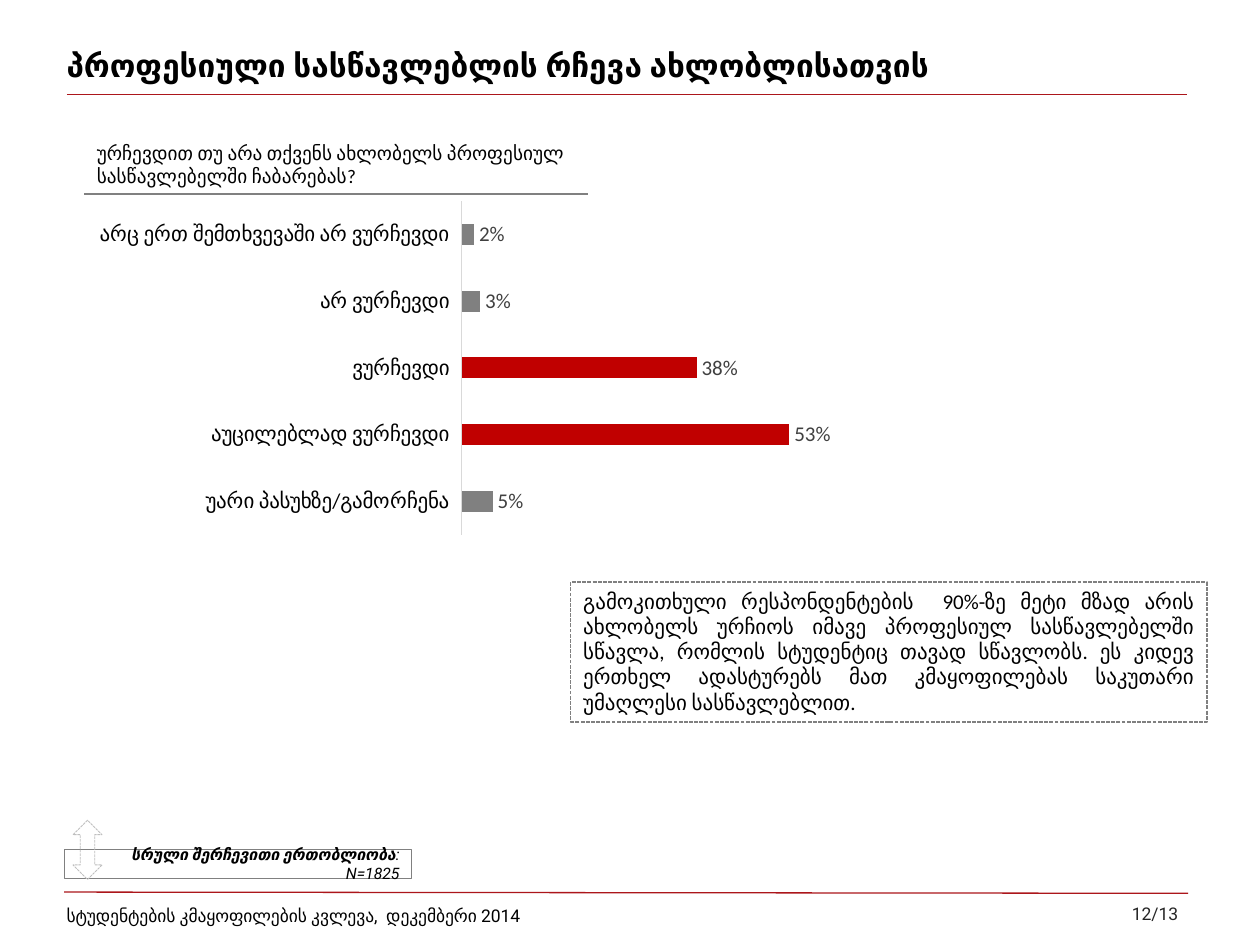
from dataclasses import dataclass
from typing import Optional

from lxml import etree
from pptx import Presentation
from pptx.chart.data import CategoryChartData
from pptx.dml.color import RGBColor
from pptx.enum.chart import XL_CHART_TYPE as Chart, XL_LABEL_POSITION as LabelPos
from pptx.enum.chart import XL_TICK_LABEL_POSITION as TickPos, XL_TICK_MARK as Tick
from pptx.enum.dml import MSO_LINE as Dash
from pptx.enum.shapes import MSO_CONNECTOR as Conn, MSO_SHAPE as Shape
from pptx.enum.text import MSO_ANCHOR as Anchor, MSO_AUTO_SIZE as Auto, PP_ALIGN as Align
from pptx.oxml.ns import qn
from pptx.util import Inches, Pt

BLACK, GREY, RED, RULE = "000000", "808080", "C00000", "AC161B"


@dataclass
class Rule:
    start: tuple
    end: tuple
    color: str


@dataclass
class Box:
    at: tuple
    runs: list  # (text, format values) pairs
    size: float
    font: str = "Roboto"
    color: str = BLACK
    align: Align = Align.LEFT
    anchor: Anchor = Anchor.MIDDLE
    auto: Auto = Auto.NONE
    outline: Optional[float] = None
    dash: Optional[Dash] = None


def rgb(value: str) -> RGBColor:
    return RGBColor.from_string(value)


def set_font(font, **values) -> None:
    font.color.rgb = rgb(values.pop("color"))
    for name, value in values.items():
        setattr(font, name, value)


def set_line(line, color: str, width: float, dash: Optional[Dash] = None) -> None:
    line.color.rgb = rgb(color)
    line.width = Pt(width)
    if dash:
        line.dash_style = dash


def add_rule(s, rule: Rule) -> None:
    points = [Inches(v) for v in rule.start + rule.end]
    line = s.shapes.add_connector(Conn.STRAIGHT, *points)
    set_line(line.line, rule.color, 0.75)
    etree.SubElement(line._element.spPr, qn("a:effectLst"))


def add_outline(s, kind: Shape, at: tuple, color: str, width: float, dash=None):
    sp = s.shapes.add_shape(kind, *map(Inches, at))
    sp.shadow.inherit = False
    sp.fill.background()
    set_line(sp.line, color, width, dash)
    return sp


def add_box(s, box: Box) -> None:
    if box.outline:
        sp = add_outline(s, Shape.RECTANGLE, box.at, GREY, box.outline, box.dash)
    else:
        sp = s.shapes.add_textbox(*map(Inches, box.at))
    tf = sp.text_frame
    layout = {"word_wrap": True, "auto_size": box.auto, "vertical_anchor": box.anchor}
    for name, value in layout.items():
        setattr(tf, name, value)
    p = tf.paragraphs[0]
    p.alignment = box.align
    for text, style in box.runs:
        r = p.add_run()
        r.text = text
        set_font(r.font, name=box.font, size=Pt(box.size), color=box.color, **style)


def add_answers(s, at: tuple, answers: dict, highlighted: set) -> None:
    data = CategoryChartData(number_format="0%")
    data.categories = list(answers)
    data.add_series("Series 1", list(answers.values()))
    chart = s.shapes.add_chart(Chart.BAR_CLUSTERED, *map(Inches, at), data).chart
    chart.has_legend = chart.has_title = False
    set_font(chart.font, name="Calibri", size=Pt(10), color=BLACK)

    # Axes
    cat, val = chart.category_axis, chart.value_axis
    cat.reverse_order = True
    cat.major_tick_mark = cat.minor_tick_mark = Tick.NONE
    cat.tick_label_position = TickPos.LOW
    set_font(cat.tick_labels.font, name="Calibri", size=Pt(12), color=BLACK)
    set_line(cat.format.line, "D9D9D9", 0.75)
    val.minimum_scale, val.maximum_scale = 0, 0.6
    val.has_major_gridlines = val.visible = False

    # Bars and their labels
    plot = chart.plots[0]
    plot.gap_width, plot.vary_by_categories = 219, False
    series = plot.series[0]
    series.invert_if_negative = False
    series.format.fill.solid()
    series.format.fill.fore_color.rgb = rgb(GREY)
    for i, answer in enumerate(answers):
        if answer in highlighted:
            fill = series.points[i].format.fill
            fill.solid()
            fill.fore_color.rgb = rgb(RED)
    labels = series.data_labels
    values = {"show_value": True, "number_format": "0%",
              "number_format_is_linked": False, "position": LabelPos.OUTSIDE_END}
    for name, value in values.items():
        setattr(labels, name, value)
    set_font(labels.font, name="Calibri", size=Pt(12), color="404040")


RULES = [
    Rule((0.51, 7.08), (9.43, 7.09), RULE),
    Rule((0.53, 0.75), (9.42, 0.75), RULE),
    Rule((0.67, 1.54), (4.67, 1.54), GREY),
]

BOXES = [
    # Page number and footer
    Box((7.92, 7.04, 1.53, 0.42), [("12/13", {})], 10, color="262626", align=Align.RIGHT),
    Box((0.43, 7.07, 5.85, 0.4),
        [("სტუდენტების კმაყოფილების კვლევა,  დეკემბერი 2014", {})], 10),
    # Title
    Box((0.43, 0.29, 7.8, 0.45),
        [("პროფესიული სასწავლებლის რჩევა ახლობლისათვის", {"bold": True})], 18),
    # Sample size
    Box((0.51, 6.74, 2.76, 0.23),
        [("სრული შერჩევითი ერთობლიობა", {"bold": True, "italic": True}),
         (": N=1825", {"italic": True})], 9, align=Align.RIGHT, outline=0.5),
    # Question
    Box((0.67, 1.07, 4.17, 0.47),
        [("ურჩევდით თუ არა თქვენს ახლობელს პროფესიულ სასწავლებელში ჩაბარებას?", {})],
        11, "Calibri", anchor=Anchor.TOP, auto=Auto.SHAPE_TO_FIT_TEXT),
    # Finding
    Box((4.53, 4.62, 5.05, 1.11),
        [("გამოკითხული რესპონდენტების  90%-ზე მეტი მზად არის ახლობელს ურჩიოს იმავე "
          "პროფესიულ სასწავლებელში სწავლა, რომლის სტუდენტიც თავად სწავლობს. ეს კიდევ "
          "ერთხელ ადასტურებს მათ კმაყოფილებას საკუთარი უმაღლესი სასწავლებლით.", {})],
        12, "Calibri", align=Align.JUSTIFY, anchor=Anchor.TOP,
        auto=Auto.SHAPE_TO_FIT_TEXT, outline=0.75, dash=Dash.SQUARE_DOT),
]

ANSWERS = {
    "არც ერთ შემთხვევაში არ ვურჩევდი": 0.02,
    "არ ვურჩევდი": 0.03,
    "ვურჩევდი": 0.38,
    "აუცილებლად ვურჩევდი": 0.53,
    "უარი პასუხზე/გამორჩენა": 0.05,
}


def main() -> None:
    prs = Presentation()
    prs.slide_width, prs.slide_height = Inches(10), Inches(7.5)
    s = prs.slides.add_slide(prs.slide_layouts[6])
    for rule in RULES:
        add_rule(s, rule)
    for box in BOXES:
        add_box(s, box)
    add_outline(s, Shape.UP_DOWN_ARROW, (0.58, 6.51, 0.23, 0.47), "BFBFBF", 0.5,
                Dash.SQUARE_DOT)
    add_answers(s, (0.67, 1.54, 6.06, 2.76), ANSWERS, {"ვურჩევდი", "აუცილებლად ვურჩევდი"})
    prs.save("out.pptx")


if __name__ == "__main__":
    main()
